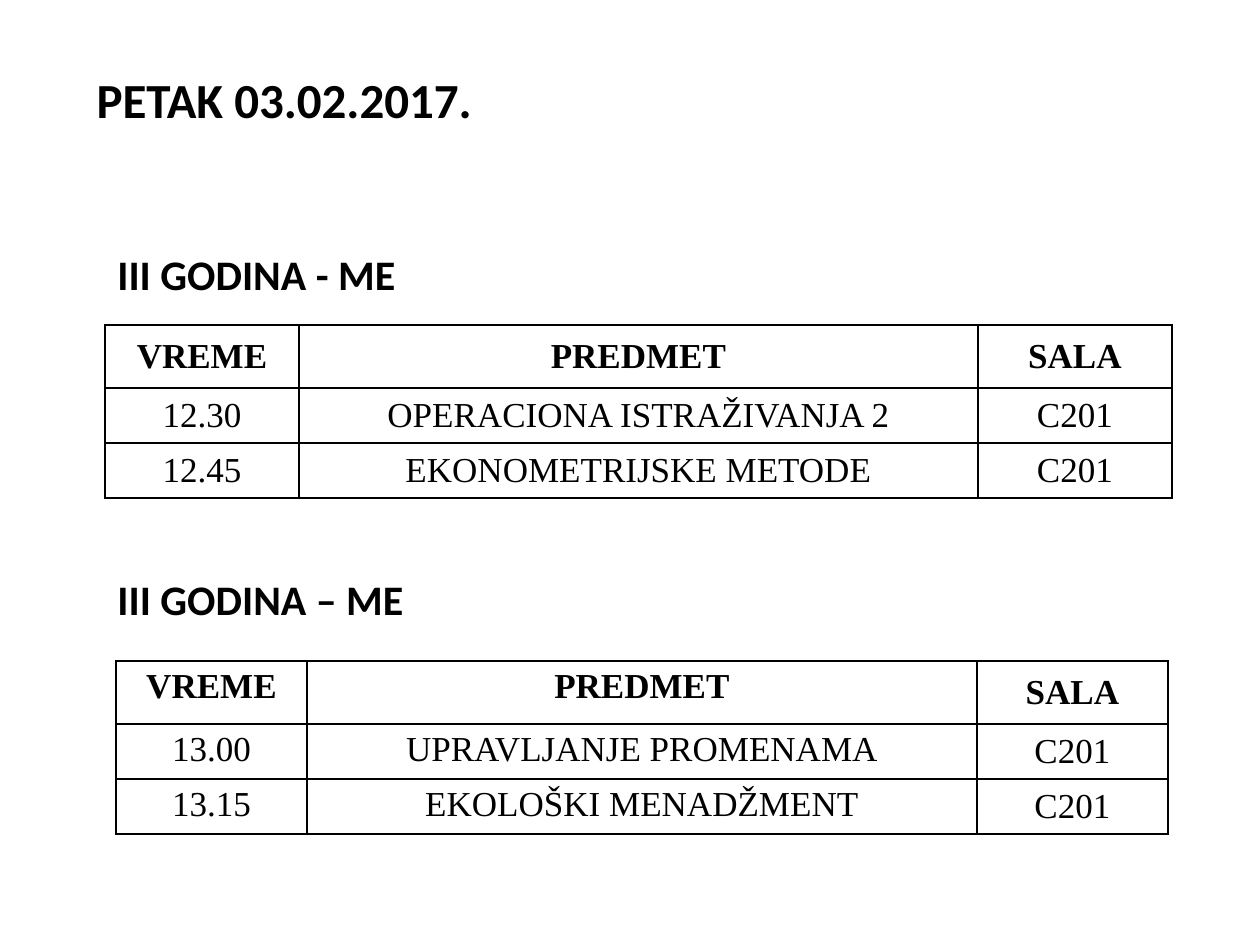
import pptx
import pptx.dml.color
import pptx.enum.text
import pptx.oxml.ns
import pptx.util
import lxml.etree

SCALE = 914400 / 126
HUES = {"ink": "000000"}
ALIGN = pptx.enum.text.PP_ALIGN
ANCHOR = pptx.enum.text.MSO_ANCHOR
HEAD = ["VREME", "PREDMET", "SALA"]


def px(*nums):
    """Turn pixel lengths into EMU."""
    return [pptx.util.Emu(round(num * SCALE)) for num in nums]


def style(frame, font, size, bold, align, anchor):
    """Format all text in a frame."""
    frame.vertical_anchor = anchor
    for para in frame.paragraphs:
        para.alignment = align
        for run in para.runs:
            run.font.name = font
            run.font.size = pptx.util.Pt(size)
            run.font.bold = bold
            run.font.color.rgb = pptx.dml.color.RGBColor.from_string(HUES["ink"])


def border(cell):
    """Draw a thin line on each side of a cell."""
    props = cell._tc.get_or_add_tcPr()
    for side in ("lnL", "lnR", "lnT", "lnB"):
        line = lxml.etree.SubElement(
            props, pptx.oxml.ns.qn("a:" + side), w=str(pptx.util.Pt(1)))
        fill = lxml.etree.SubElement(line, pptx.oxml.ns.qn("a:solidFill"))
        lxml.etree.SubElement(fill, pptx.oxml.ns.qn("a:srgbClr"), val=HUES["ink"])


def title(slide, text, box):
    """Place the day in the title placeholder."""
    shape = slide.shapes.title
    shape.left, shape.top, shape.width, shape.height = px(*box)
    frame = shape.text_frame
    frame.text = text
    frame.word_wrap = False
    style(frame, "Calibri", 28, True, ALIGN.LEFT, ANCHOR.TOP)


def label(slide, text, box):
    """Place the heading of a year group."""
    frame = slide.shapes.add_textbox(*px(*box)).text_frame
    frame.text = text
    frame.word_wrap = False
    style(frame, "Calibri", 24, True, ALIGN.LEFT, ANCHOR.MIDDLE)


def grid(slide, rows, box, anchors):
    """Place an exam table whose outer columns share one width."""
    left, top, width, height = box
    table = slide.shapes.add_table(len(rows), 3, *px(*box)).table
    side = round(width * 2 / 11)
    for col, size in zip(table.columns, px(side, width - 2 * side, side)):
        col.width = size
    first = 63
    rest = (height - first) / (len(rows) - 1)
    for i, texts in enumerate(rows):
        table.rows[i].height = px(rest if i else first)[0]
        for j, text in enumerate(texts):
            cell = table.cell(i, j)
            border(cell)
            cell.fill.background()
            cell.text_frame.text = text
            style(cell.text_frame, "Times New Roman", 20, i == 0,
                  ALIGN.CENTER, None)
            cell.vertical_anchor = anchors[j]


def main():
    """Build the exam timetable slide."""
    deck = pptx.Presentation()
    deck.slide_width, deck.slide_height = px(1260, 945)
    slide = deck.slides.add_slide(deck.slide_layouts[5])
    mid, top = ANCHOR.MIDDLE, ANCHOR.TOP
    title(slide, "PETAK 03.02.2017.", (84, 63, 428, 72))
    label(slide, "III GODINA - ME", (105, 242, 340, 63))
    grid(slide, [HEAD,
                 ["12.30", "OPERACIONA ISTRAŽIVANJA 2", "C201"],
                 ["12.45", "EKONOMETRIJSKE METODE", "C201"]],
         (105, 325, 1067, 173), (mid, mid, mid))
    label(slide, "III GODINA – ME", (105, 567, 324, 63))
    grid(slide, [HEAD,
                 ["13.00", "UPRAVLJANJE PROMENAMA", "C201"],
                 ["13.15", "EKOLOŠKI MENADŽMENT", "C201"]],
         (116, 661, 1052, 173), (top, top, mid))
    deck.save("out.pptx")


if __name__ == "__main__":
    main()
